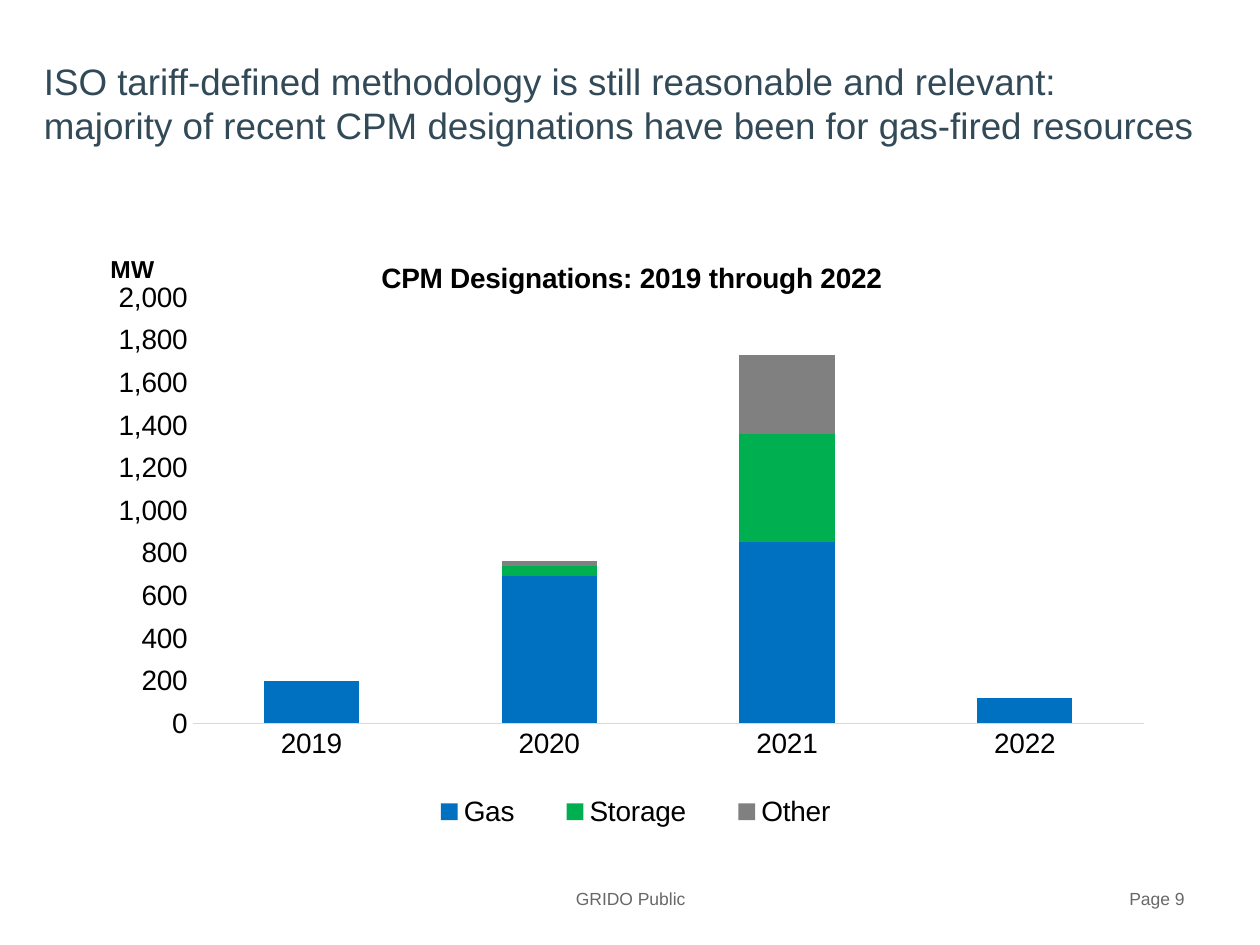
from dataclasses import dataclass
from typing import Optional

from pptx import Presentation
from pptx.chart.data import CategoryChartData
from pptx.dml.color import RGBColor
from pptx.enum.chart import XL_CHART_TYPE, XL_LEGEND_POSITION, XL_TICK_MARK
from pptx.enum.text import MSO_ANCHOR, PP_ALIGN
from pptx.oxml import parse_xml
from pptx.oxml.ns import nsdecls
from pptx.util import Inches, Pt


@dataclass(frozen=True)
class Theme:
    face: str = "Arial"
    title: str = "324A58"
    foot: str = "686868"
    ink: str = "000000"
    line: str = "D9D9D9"
    head: int = 21
    label: int = 16
    unit: int = 14
    small: int = 10


@dataclass(frozen=True)
class Note:
    text: str
    box: tuple[float, float, float, float]
    size: int
    color: str
    align: PP_ALIGN


@dataclass(frozen=True)
class Fuel:
    name: str
    color: str
    vals: tuple[Optional[int], ...]


THEME = Theme()
YEARS = ("2019", "2020", "2021", "2022")
FUELS = (
    Fuel("Gas", "0070C0", (200, 690, 850, 120)),
    Fuel("Storage", "00B050", (None, 50, 510, None)),
    Fuel("Other", "808080", (0, 20, 370, 0)),
)
NOTES = (
    Note("ISO tariff-defined methodology is still reasonable and relevant: "
         "majority of recent CPM designations have been for gas-fired resources",
         (0.25, 0.42, 9.33, 0.79), THEME.head, THEME.title, PP_ALIGN.LEFT),
    Note("GRIDO Public", (4.42, 6.93, 1.17, 0.4),
         THEME.small, THEME.foot, PP_ALIGN.CENTER),
    Note("Page 9", (7.17, 6.93, 2.33, 0.4),
         THEME.small, THEME.foot, PP_ALIGN.RIGHT),
)


def style(font, size: int, color: str, bold: bool = False) -> None:
    font.name, font.size, font.bold = THEME.face, Pt(size), bold
    font.color.rgb = RGBColor.from_string(color)


def write(frame, text: str, size: int, color: str, bold: bool = False) -> None:
    run = frame.paragraphs[0].add_run()
    run.text = text
    style(run.font, size, color, bold)


def add_note(slide, note: Note) -> None:
    frame = slide.shapes.add_textbox(*map(Inches, note.box)).text_frame
    frame.word_wrap = True
    frame.vertical_anchor = MSO_ANCHOR.MIDDLE
    frame.paragraphs[0].alignment = note.align
    write(frame, note.text, note.size, note.color)


def place(chart, query: str, inner: bool = False, **spot: float) -> None:
    """Fix a chart part at fractions of the chart area."""
    part = chart.element.xpath(query)[0]
    for old in part.xpath("c:layout"):
        part.remove(old)
    target = '<c:layoutTarget val="inner"/>' if inner else ""
    modes = "".join(f'<c:{k}Mode val="edge"/>' for k in "xy")
    sizes = "".join(f'<c:{k} val="{v}"/>' for k, v in spot.items())
    layout = parse_xml(
        f'<c:layout {nsdecls("c")}><c:manualLayout>{target}{modes}{sizes}'
        "</c:manualLayout></c:layout>")
    over = part.xpath("c:overlay")
    if over:
        over[0].addprevious(layout)
    else:
        part.insert(0, layout)


def add_bars(slide) -> None:
    data = CategoryChartData(number_format="#,##0")
    data.categories = YEARS
    for fuel in FUELS:
        data.add_series(fuel.name, fuel.vals)
    box = map(Inches, (0.67, 1.83, 8.58, 4.83))
    chart = slide.shapes.add_chart(
        XL_CHART_TYPE.COLUMN_STACKED, *box, data).chart
    style(chart.font, THEME.small, THEME.ink)

    # Bars
    plot = chart.plots[0]
    plot.gap_width, plot.overlap = 150, 100
    plot.vary_by_categories = False
    for bar, fuel in zip(plot.series, FUELS):
        bar.format.fill.solid()
        bar.format.fill.fore_color.rgb = RGBColor.from_string(fuel.color)

    # Axes
    cat, val = chart.category_axis, chart.value_axis
    for axis in (cat, val):
        axis.has_major_gridlines = False
        axis.major_tick_mark = axis.minor_tick_mark = XL_TICK_MARK.NONE
        style(axis.tick_labels.font, THEME.label, THEME.ink)
    cat.format.line.color.rgb = RGBColor.from_string(THEME.line)
    cat.format.line.width = Pt(0.75)
    val.format.line.fill.background()
    val.minimum_scale, val.maximum_scale, val.major_unit = 0, 2000, 200
    val.tick_labels.number_format = "#,##0"
    val.tick_labels.number_format_is_linked = False

    # Titles and legend
    chart.has_title = True
    write(chart.chart_title.text_frame, "CPM Designations: 2019 through 2022",
          THEME.label, THEME.ink, True)
    val.has_title = True
    write(val.axis_title.text_frame, "MW", THEME.unit, THEME.ink, True)
    turn = chart.element.xpath(".//c:valAx/c:title//a:bodyPr")[0]
    turn.set("rot", "0")
    turn.set("vert", "horz")
    chart.has_legend = True
    key = chart.legend
    key.position = XL_LEGEND_POSITION.BOTTOM
    key.include_in_layout = False
    style(key.font, THEME.label, THEME.ink)

    # Positions
    place(chart, "c:chart/c:title", x=0.27, y=0.04)
    place(chart, ".//c:valAx/c:title", x=0.02, y=0.03)
    place(chart, ".//c:legend", x=0.29, y=0.91, w=0.44, h=0.09)
    place(chart, ".//c:plotArea", True, x=0.1, y=0.11, w=0.88, h=0.7)


def main() -> None:
    deck = Presentation()
    deck.slide_width, deck.slide_height = Inches(10), Inches(7.5)
    slide = deck.slides.add_slide(deck.slide_layouts[6])
    for note in NOTES:
        add_note(slide, note)
    add_bars(slide)
    deck.save("out.pptx")


if __name__ == "__main__":
    main()
